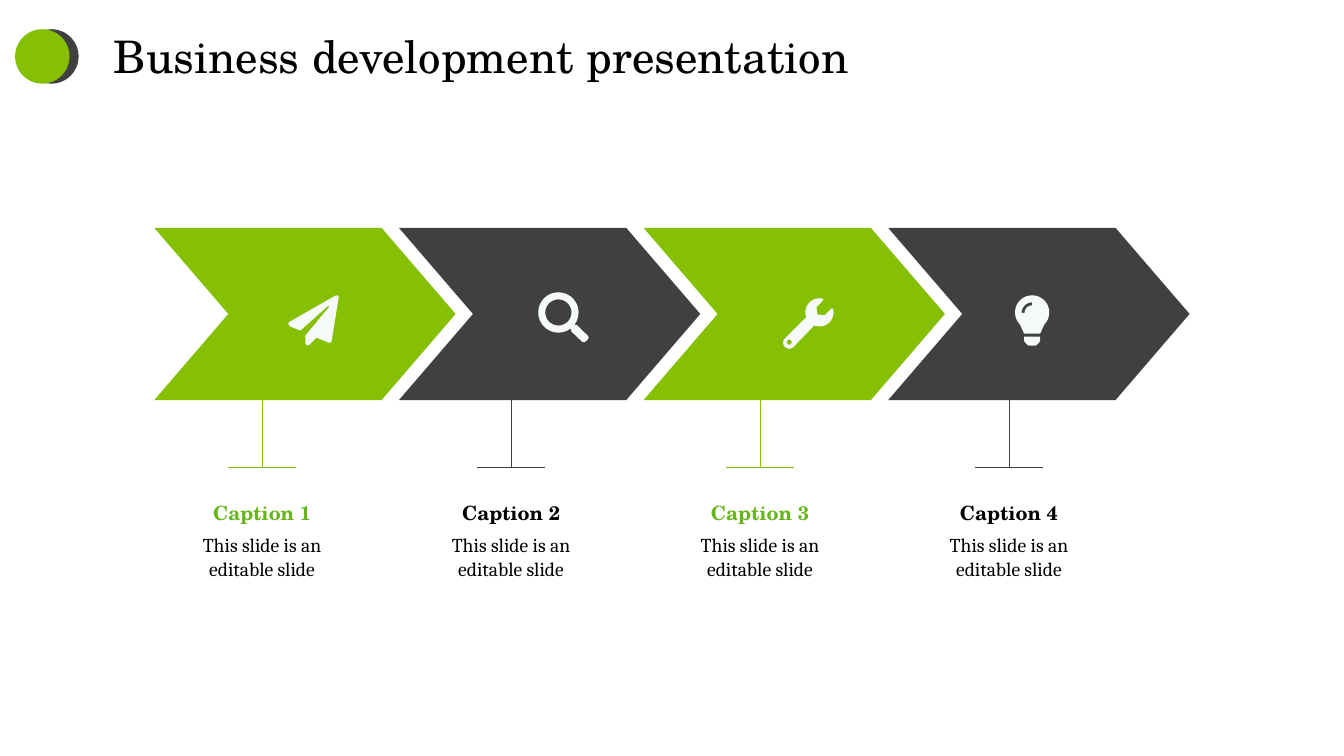
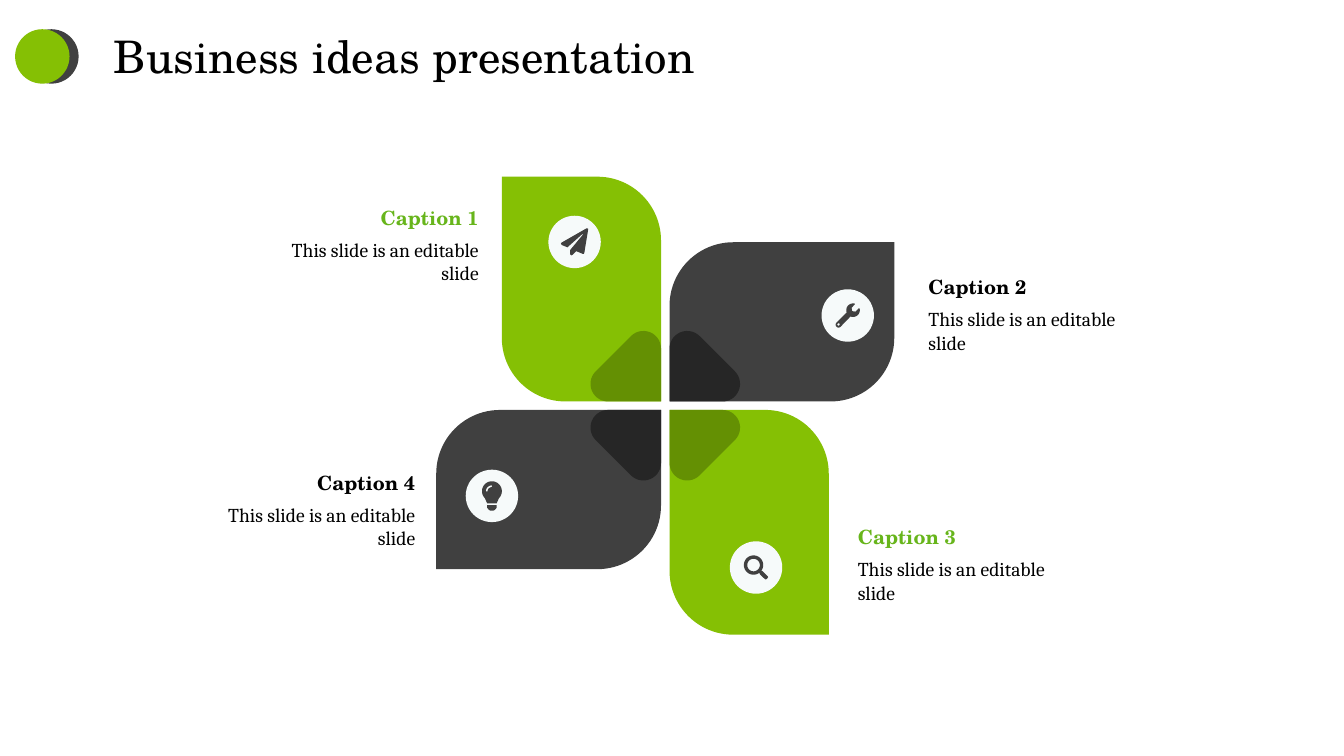
import math

import lxml.etree
import pptx
import pptx.dml.color
import pptx.enum.shapes
import pptx.enum.text
import pptx.oxml.ns
import pptx.util

SHAPE = pptx.enum.shapes.MSO_SHAPE
ALIGN = pptx.enum.text.PP_ALIGN

GREEN = pptx.dml.color.RGBColor(0x85, 0xC0, 0x04)
DEEP_GREEN = pptx.dml.color.RGBColor(0x64, 0x90, 0x03)
CAPTION_GREEN = pptx.dml.color.RGBColor(0x67, 0xB5, 0x1B)
CHARCOAL = pptx.dml.color.RGBColor(0x40, 0x40, 0x40)
DEEP_CHARCOAL = pptx.dml.color.RGBColor(0x26, 0x26, 0x26)
BLACK = pptx.dml.color.RGBColor(0x00, 0x00, 0x00)
PALE = pptx.dml.color.RGBColor(0xF6, 0xFA, 0xFA)

FILLS = (GREEN, CHARCOAL)
FOLD_FILLS = (DEEP_GREEN, DEEP_CHARCOAL)
CAPTION_COLORS = (CAPTION_GREEN, BLACK)

CELL = pptx.util.Inches(0.1)
COLUMNS, ROWS = 133.33, 75


def cells(count):
    return pptx.util.Emu(round(count * CELL))


def arc(x, y, radius, start, end):
    steps = max(2, math.ceil(abs(end - start) / 10))
    angles = [math.radians(start + (end - start) * i / steps) for i in range(steps + 1)]
    return [(x + radius * math.cos(a), y + radius * math.sin(a)) for a in angles]


PLANE = [
    [(100, 5), (86, 91), (84, 94), (80, 94), (56, 84), (42, 98), (38, 100),
     (34, 96), (34, 80), (82, 22), (79, 21), (24, 70), (4, 62), (0, 57),
     (2, 53), (93, 1), (97, 0), (100, 2)],
]
MAGNIFIER = [
    arc(40, 40, 40, 53, 397)
    + [(77, 65), (99, 87), (100, 90), (98, 94), (92, 99), (88, 99), (66, 78), (65, 74)],
    arc(40, 40, 26, 0, 360),
]
WRENCH = [
    arc(72, 28, 28, -15, 112) + arc(12, 88, 12, 45, 225) + arc(72, 28, 28, 160, 285)
    + [(80, 3), (66, 18), (68, 32), (82, 34), (96, 20)],
    arc(12, 87, 5, 0, 360),
]
BULB = [
    arc(50, 34, 34, 135, 405) + [(66, 76), (34, 76)],
    arc(50, 35, 21, 180, 270) + arc(50, 35, 15, 270, 180),
    [(34, 82), (66, 82), (66, 91), (60, 98), (56, 100), (44, 100), (40, 98), (34, 91)],
]


class Deck:
    heading_font = "TeX Gyre Schola"
    body_font = "Cambria"

    def __init__(self):
        self.presentation = pptx.Presentation()
        self.presentation.slide_width = cells(COLUMNS)
        self.presentation.slide_height = cells(ROWS)
        self.slide = None

    def start_slide(self, title):
        self.slide = self.presentation.slides.add_slide(self.presentation.slide_layouts[6])
        for column, color in ((2.4, CHARCOAL), (1.5, GREEN)):
            self.preset(SHAPE.OVAL, column, 2.9, 5.4, 5.4, color)
        frame = self.text_frame(10.3, 2.4, 113.8, 6.4)
        self.run(frame.paragraphs[0], title, self.heading_font, 32, BLACK)

    def paint(self, shape, color):
        shape.shadow.inherit = False
        shape.fill.solid()
        shape.fill.fore_color.rgb = color
        shape.line.fill.background()

    def preset(self, kind, column, row, width, height, color, adjustments=()):
        shape = self.slide.shapes.add_shape(
            kind, cells(column), cells(row), cells(width), cells(height))
        for index, value in enumerate(adjustments):
            shape.adjustments[index] = value
        self.paint(shape, color)

    def outline(self, contours, color):
        contours = [[(cells(x), cells(y)) for x, y in contour] for contour in contours]
        builder = self.slide.shapes.build_freeform(*contours[0][0])
        builder.add_line_segments(contours[0][1:])
        for contour in contours[1:]:
            builder.move_to(*contour[0])
            builder.add_line_segments(contour[1:])
        self.paint(builder.convert_to_shape(), color)

    def icon(self, contours, x, y, size, color):
        scale = size / 100
        self.outline(
            [[(x + (px - 50) * scale, y + (py - 50) * scale) for px, py in contour]
             for contour in contours], color)

    def line(self, x1, y1, x2, y2, color):
        connector = self.slide.shapes.add_connector(
            pptx.enum.shapes.MSO_CONNECTOR.STRAIGHT,
            cells(x1), cells(y1), cells(x2), cells(y2))
        connector.line.color.rgb = color
        connector.line.width = pptx.util.Pt(0.68)
        lxml.etree.SubElement(connector._element.spPr, pptx.oxml.ns.qn("a:effectLst"))

    def text_frame(self, column, row, width, height):
        frame = self.slide.shapes.add_textbox(
            cells(column), cells(row), cells(width), cells(height)).text_frame
        frame.word_wrap = True
        frame.auto_size = pptx.enum.text.MSO_AUTO_SIZE.SHAPE_TO_FIT_TEXT
        return frame

    def run(self, paragraph, text, font, size, color, bold=False):
        run = paragraph.add_run()
        run.text = text
        run.font.name = font
        run.font.size = pptx.util.Pt(size)
        run.font.color.rgb = color
        run.font.bold = bold

    def caption(self, number, column, row, width, align):
        frame = self.text_frame(column, row, width, 7.9)
        frame.margin_left = frame.margin_right = frame.margin_top = frame.margin_bottom = 0
        heading, body = frame.paragraphs[0], frame.add_paragraph()
        for paragraph in (heading, body):
            paragraph.alignment = align
            paragraph.space_before = pptx.util.Pt(6)
        color = CAPTION_COLORS[(number - 1) % 2]
        self.run(heading, f"Caption {number}", self.heading_font, 14, color, True)
        self.run(body, "This slide is an editable slide", self.body_font, 14, BLACK)

    def leaf(self, side_x, side_y, fill, fold_fill):
        center_x, center_y, half_gap = 66, 40.25, 0.42
        upright = side_x == side_y
        width, height = (15.8, 22.3) if upright else (22.3, 15.8)
        corner_x = center_x + side_x * half_gap
        corner_y = center_y + side_y * half_gap
        self.preset(
            SHAPE.ROUND_2_DIAG_RECTANGLE,
            min(corner_x, corner_x + side_x * width),
            min(corner_y, corner_y + side_y * height),
            width, height, fill, (0, 0.4) if upright else (0.4, 0))
        reach, radius = 5.25, 1.75
        fold = [(0, 0)] + arc(reach, radius, radius, -90, 45) + arc(radius, reach, radius, 45, 180)
        self.outline(
            [[(corner_x + side_x * x, corner_y + side_y * y) for x, y in fold]], fold_fill)

    def badge(self, contours, x, y, size):
        radius = 2.6
        self.preset(SHAPE.OVAL, x - radius, y - radius, 2 * radius, 2 * radius, PALE)
        self.icon(contours, x, y, size, CHARCOAL)


def development_slide(deck):
    deck.start_slide("Business development presentation")
    icons = ((PLANE, 31.1, 31.8), (MAGNIFIER, 55.9, 31.5),
             (WRENCH, 80.2, 32.1), (BULB, 102.4, 31.8))
    arrow_top, arrow_height, stem_height = 22.6, 17.1, 6.7
    stem_top = arrow_top + arrow_height
    foot = stem_top + stem_height
    for index, (contours, icon_x, icon_y) in enumerate(icons):
        color = FILLS[index % 2]
        deck.preset(SHAPE.CHEVRON, 15.3 + 24.27 * index, arrow_top, 29.9, arrow_height,
                    color, (0.43,))
        deck.icon(contours, icon_x, icon_y, 5, PALE)
        stem = 26 + 24.7 * index
        deck.line(stem, stem_top, stem, foot, color)
        deck.line(stem - 3.35, foot, stem + 3.35, foot, color)
        deck.caption(index + 1, stem - 8.45, 49.7, 16.9, ALIGN.CENTER)


def ideas_slide(deck):
    deck.start_slide("Business ideas presentation")
    ideas = (
        (-1, -1, PLANE, 57, 24, 2.7, 28.4, 20.4),
        (1, -1, WRENCH, 84.1, 31.3, 2.4, 92.1, 27.3),
        (1, 1, MAGNIFIER, 75, 56.3, 2.4, 85.1, 52.1),
        (-1, 1, BULB, 48.8, 49.2, 2.9, 22.1, 46.7),
    )
    for index, idea in enumerate(ideas):
        side_x, side_y, contours, badge_x, badge_y, size, column, row = idea
        deck.leaf(side_x, side_y, FILLS[index % 2], FOLD_FILLS[index % 2])
        deck.badge(contours, badge_x, badge_y, size)
        deck.caption(index + 1, column, row, 19.1, ALIGN.RIGHT if side_x < 0 else ALIGN.LEFT)


def main():
    deck = Deck()
    development_slide(deck)
    ideas_slide(deck)
    deck.presentation.save("out.pptx")


if __name__ == "__main__":
    main()
